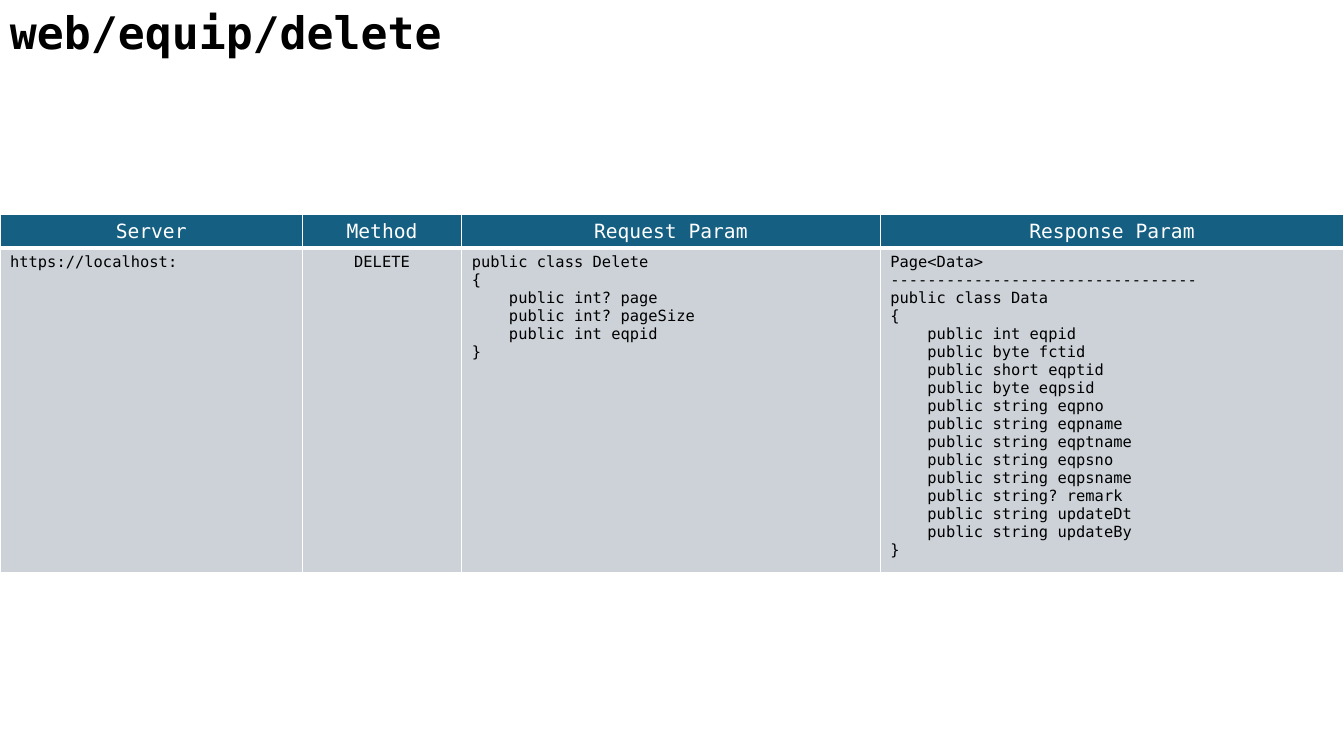
import pptx
import pptx.dml.color
import pptx.enum.text
import pptx.oxml
import pptx.oxml.ns
import pptx.util
from pptx.util import Inches

WHITE = pptx.dml.color.RGBColor(0xFF, 0xFF, 0xFF)
BLACK = pptx.dml.color.RGBColor(0x00, 0x00, 0x00)
TEAL = pptx.dml.color.RGBColor(0x15, 0x60, 0x82)
GREY = pptx.dml.color.RGBColor(0xCC, 0xD2, 0xD8)

FONT = "DejaVu Sans Mono"
LEFT = pptx.enum.text.PP_ALIGN.LEFT
CENTER = pptx.enum.text.PP_ALIGN.CENTER

TITLE_FORMAT = {"name": FONT, "size": pptx.util.Pt(32), "bold": True}
HEADER_FORMAT = {"name": FONT, "size": pptx.util.Pt(14), "bold": False}
BODY_FORMAT = {"name": FONT, "size": pptx.util.Pt(11), "bold": False}

HEADER_BORDERS = {"lnL": 1, "lnR": 1, "lnT": 1, "lnB": 3}
BODY_BORDERS = {"lnL": 1, "lnR": 1, "lnT": 1, "lnB": 1}

COLUMN_WIDTHS = [3, 1.58, 4.15, 4.6]
ROW_HEIGHTS = [0.33, 3.22]
HEADERS = ["Server", "Method", "Request Param", "Response Param"]

REQUEST = """public class Delete
{
    public int? page
    public int? pageSize
    public int eqpid
}"""

RESPONSE = """Page<Data>
---------------------------------
public class Data
{
    public int eqpid
    public byte fctid
    public short eqptid
    public byte eqpsid
    public string eqpno
    public string eqpname
    public string eqptname
    public string eqpsno
    public string eqpsname
    public string? remark
    public string updateDt
    public string updateBy
}"""

BODY = [
    ("https://localhost:", LEFT),
    ("DELETE", CENTER),
    (REQUEST, LEFT),
    (RESPONSE, LEFT),
]


def write_text(frame, text, font_format, color, alignment=LEFT):
    frame.text = text
    for para in frame.paragraphs:
        para.alignment = alignment
        for span in para.runs:
            for key, value in font_format.items():
                setattr(span.font, key, value)
            span.font.color.rgb = color


def add_title(page, text):
    box = page.shapes.add_textbox(0, 0, Inches(9.45), Inches(0.64))
    box.text_frame.word_wrap = True
    box.text_frame.auto_size = pptx.enum.text.MSO_AUTO_SIZE.SHAPE_TO_FIT_TEXT
    write_text(box.text_frame, text, TITLE_FORMAT, BLACK)


def set_borders(cell, borders):
    properties = cell._tc.get_or_add_tcPr()
    for side, points in borders.items():
        properties.append(pptx.oxml.parse_xml(
            f'<a:{side} {pptx.oxml.ns.nsdecls("a")} w="{pptx.util.Pt(points)}">'
            f'<a:solidFill><a:srgbClr val="{WHITE}"/></a:solidFill></a:{side}>'
        ))


def fill_cell(cell, text, font_format, color, alignment, background, borders):
    write_text(cell.text_frame, text, font_format, color, alignment)
    set_borders(cell, borders)
    cell.fill.solid()
    cell.fill.fore_color.rgb = background


def add_endpoint_table(page):
    table = page.shapes.add_table(
        len(ROW_HEIGHTS), len(COLUMN_WIDTHS), 0, Inches(2.13),
        Inches(sum(COLUMN_WIDTHS)), Inches(sum(ROW_HEIGHTS))
    ).table
    for column, width in zip(table.columns, COLUMN_WIDTHS):
        column.width = Inches(width)
    for row, height in zip(table.rows, ROW_HEIGHTS):
        row.height = Inches(height)
    for index, (header, (text, alignment)) in enumerate(zip(HEADERS, BODY)):
        fill_cell(table.cell(0, index), header, HEADER_FORMAT, WHITE,
                  CENTER, TEAL, HEADER_BORDERS)
        fill_cell(table.cell(1, index), text, BODY_FORMAT, BLACK,
                  alignment, GREY, BODY_BORDERS)


def main():
    deck = pptx.Presentation()
    deck.slide_width = Inches(13.33)
    deck.slide_height = Inches(7.5)
    page = deck.slides.add_slide(deck.slide_layouts[6])
    add_title(page, "web/equip/delete")
    add_endpoint_table(page)
    deck.save("out.pptx")


if __name__ == "__main__":
    main()
